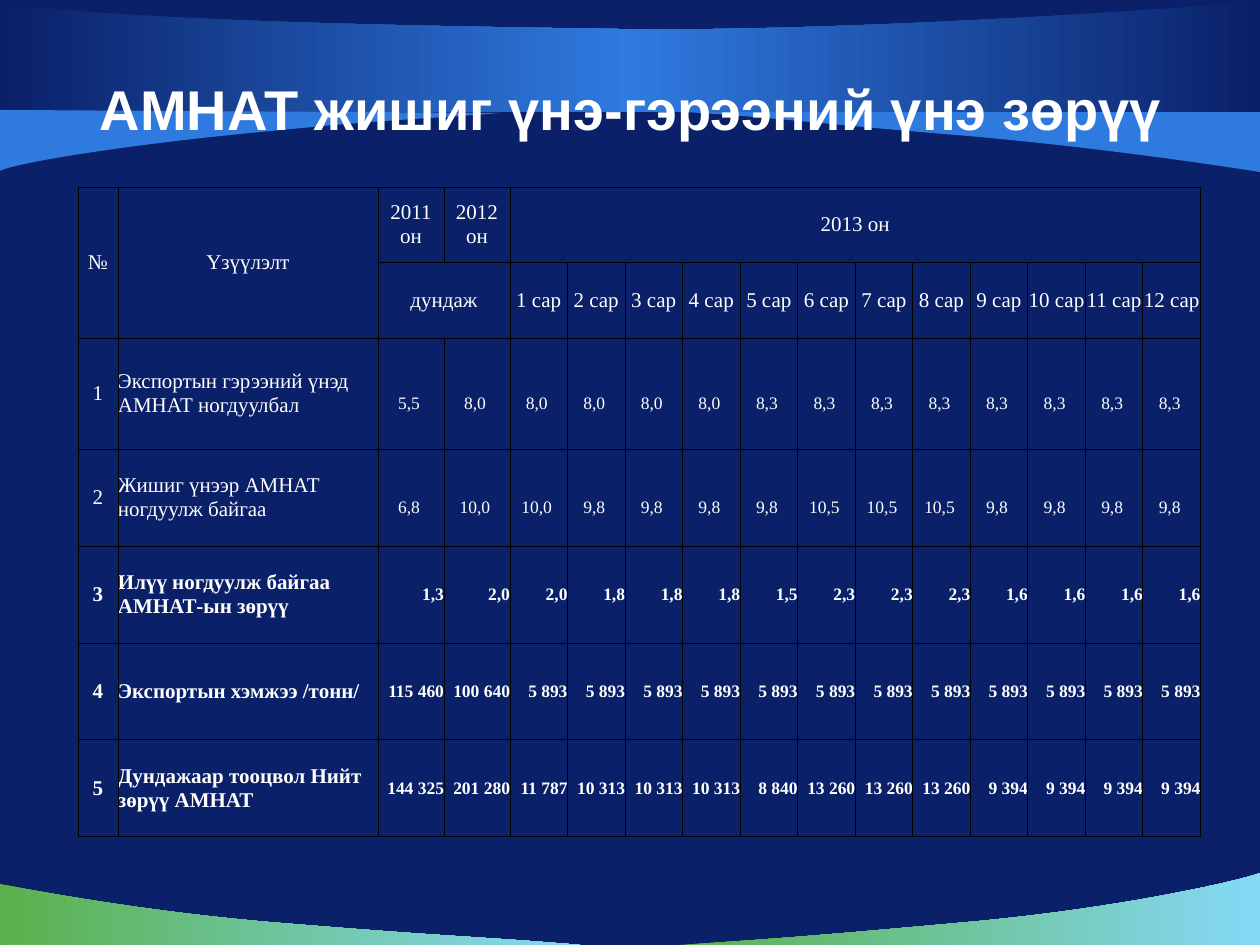
import copy
from dataclasses import dataclass

import lxml.etree
import pptx
import pptx.dml.color
import pptx.enum.text
import pptx.oxml.ns
import pptx.util

ALIGN = pptx.enum.text.PP_ALIGN
MIDDLE = pptx.enum.text.MSO_ANCHOR.MIDDLE
EMU_PER_PX = 914400 / 126


@dataclass(frozen=True)
class Theme:
    """Colours, fonts and type sizes of the slide."""
    navy: str = "0A2068"
    blue: str = "2F7ADF"
    green: str = "5AB14B"
    sky: str = "85D9F7"
    text: str = "FFFFFF"
    border: str = "000000"
    title_font: str = "Arial"
    table_font: str = "Times New Roman"
    title_size: int = 32
    label_size: int = 12
    value_size: int = 10
    border_width: float = 0.5


THEME = Theme()

WAVES = [
    ((0, 884), (THEME.green, THEME.sky),
     [(580, 61), (484, 53, 451, 53, 292, 40), (134, 28, 1, 0, 0, 0), (0, 61)]),
    ((679, 873), (THEME.green, THEME.sky),
     [(0, 72), (95, 66, 135, 63, 290, 49), (445, 35, 568, 6, 581, 0), (581, 72)]),
    ((685, 111), (THEME.blue,),
     [(0, 1), (96, 7, 124, 12, 283, 25), (441, 39, 574, 61, 575, 61), (575, 0)]),
    ((0, 0), (THEME.navy, THEME.blue, THEME.navy),
     [(0, 112), (1260, 112), (1260, 0), (1215, 8, 823, 33, 614, 29),
      (404, 26, 127, 21, 0, 3)]),
    ((0, 110), (THEME.blue,),
     [(501, 3), (417, 10, 401, 8, 262, 22), (122, 35, 11, 54, 0, 61), (0, 0)]),
]

TITLE = "АМНАТ жишиг үнэ-гэрээний үнэ зөрүү"
MONTH_COUNT = 12
HEADERS = [
    ["№", "Үзүүлэлт", "2011 он", "2012 он", "2013 он"] + [""] * (MONTH_COUNT - 1),
    ["", "", "дундаж", ""] + [f"{month} сар" for month in range(1, MONTH_COUNT + 1)],
]
SPANS = [(0, 0, 1, 0), (0, 1, 1, 1), (0, 4, 0, 15), (1, 2, 1, 3)]
INDICATORS = [
    ("Экспортын гэрээний үнэд АМНАТ ногдуулбал",
     ["5,5"] + ["8,0"] * 5 + ["8,3"] * 8),
    ("Жишиг үнээр АМНАТ ногдуулж байгаа",
     ["6,8"] + ["10,0"] * 2 + ["9,8"] * 4 + ["10,5"] * 3 + ["9,8"] * 4),
    ("Илүү ногдуулж байгаа АМНАТ-ын зөрүү",
     ["1,3"] + ["2,0"] * 2 + ["1,8"] * 3 + ["1,5"] + ["2,3"] * 3 + ["1,6"] * 4),
    ("Экспортын хэмжээ /тонн/",
     ["115 460", "100 640"] + ["5 893"] * 12),
    ("Дундажаар тооцвол Нийт зөрүү АМНАТ",
     ["144 325", "201 280", "11 787"] + ["10 313"] * 3 + ["8 840"]
     + ["13 260"] * 3 + ["9 394"] * 4),
]
PLAIN_INDICATORS = 2


def emu(px):
    """Turn px into EMU."""
    return pptx.util.Emu(round(px * EMU_PER_PX))


def rgb(value):
    """Return the colour for a hex value."""
    return pptx.dml.color.RGBColor.from_string(value)


def style_text(para, font, size, bold, align):
    """Align a paragraph and format its runs."""
    para.alignment = align
    for span in para.runs:
        span.font.name = font
        span.font.size = pptx.util.Pt(size)
        span.font.bold = bold
        span.font.color.rgb = rgb(THEME.text)


def bend_segments(shape, segments):
    """Turn the straight segments that have control points into cubic curves."""
    lines = shape._element.spPr.findall(".//" + pptx.oxml.ns.qn("a:lnTo"))
    for line, segment in zip(lines, segments[1:]):
        if len(segment) == 2:
            continue
        curve = lxml.etree.Element(pptx.oxml.ns.qn("a:cubicBezTo"))
        for x, y in zip(segment[::2], segment[1::2]):
            point = lxml.etree.SubElement(curve, pptx.oxml.ns.qn("a:pt"))
            point.set("x", str(emu(x)))
            point.set("y", str(emu(y)))
        line.getparent().replace(line, curve)


def fill_wave(shape, colors):
    """Fill a shape with one colour or an even left-to-right gradient."""
    if len(colors) == 1:
        shape.fill.solid()
        shape.fill.fore_color.rgb = rgb(colors[0])
        return
    shape.fill.gradient()
    shape.fill.gradient_angle = 0
    stop_list = shape._element.spPr.find(".//" + pptx.oxml.ns.qn("a:gsLst"))
    for _ in colors[2:]:
        stop_list.append(copy.deepcopy(stop_list[0]))
    for index, (stop, color) in enumerate(zip(shape.fill.gradient_stops, colors)):
        stop.position = index / (len(colors) - 1)
        stop.color.rgb = rgb(color)


def add_wave(page, corner, colors, segments):
    """Draw one background wave relative to its top left corner."""
    left, top = corner
    points = [(emu(left + segment[-2]), emu(top + segment[-1])) for segment in segments]
    builder = page.shapes.build_freeform(*points[0])
    builder.add_line_segments(points[1:], close=True)
    shape = builder.convert_to_shape()
    bend_segments(shape, segments)
    shape.shadow.inherit = False
    shape.line.fill.background()
    fill_wave(shape, colors)


def add_title(page, box):
    """Place the centred title in its box."""
    frame = page.shapes.add_textbox(*map(emu, box)).text_frame
    frame.word_wrap = True
    frame.vertical_anchor = MIDDLE
    frame.text = TITLE
    style_text(frame.paragraphs[0], THEME.title_font, THEME.title_size, True, ALIGN.CENTER)


def add_borders(cell):
    """Draw thin lines on all four sides of a cell."""
    properties = cell._tc.get_or_add_tcPr()
    for side in ("a:lnL", "a:lnR", "a:lnT", "a:lnB"):
        line = lxml.etree.SubElement(properties, pptx.oxml.ns.qn(side))
        line.set("w", str(pptx.util.Pt(THEME.border_width)))
        fill = lxml.etree.SubElement(line, pptx.oxml.ns.qn("a:solidFill"))
        lxml.etree.SubElement(fill, pptx.oxml.ns.qn("a:srgbClr")).set("val", THEME.border)


def fill_cell(cell, text, size, bold, align):
    """Set the text and look of one table cell."""
    cell.margin_left = cell.margin_right = cell.margin_top = cell.margin_bottom = 0
    cell.vertical_anchor = MIDDLE
    add_borders(cell)
    cell.fill.background()
    cell.text_frame.text = text
    style_text(cell.text_frame.paragraphs[0], THEME.table_font, size, bold, align)


def add_price_table(page, box):
    """Place the price difference table in its box."""
    width, height = box[2:]
    leading = [40, 260, 66, 66]
    widths = leading + [(width - sum(leading)) / MONTH_COUNT] * MONTH_COUNT
    heights = [75, 76, 111] + [(height - 262) / 4] * 4
    table = page.shapes.add_table(len(heights), len(widths), *map(emu, box)).table
    table.first_row = table.horz_banding = False
    for column, size in zip(table.columns, widths):
        column.width = emu(size)
    for row, size in zip(table.rows, heights):
        row.height = emu(size)
    for row, labels in enumerate(HEADERS):
        for column, label in enumerate(labels):
            fill_cell(table.cell(row, column), label, THEME.label_size, False, ALIGN.CENTER)
    for row, (name, values) in enumerate(INDICATORS, len(HEADERS)):
        number = row - len(HEADERS) + 1
        plain = number <= PLAIN_INDICATORS
        fill_cell(table.cell(row, 0), str(number), THEME.label_size, not plain, ALIGN.CENTER)
        fill_cell(table.cell(row, 1), name, THEME.label_size, not plain, ALIGN.LEFT)
        for column, value in enumerate(values, 2):
            cell = table.cell(row, column)
            align = ALIGN.CENTER if plain else ALIGN.RIGHT
            fill_cell(cell, value, THEME.value_size, not plain, align)
            if plain:
                cell.margin_top, cell.margin_right = emu(20), emu(4)
    for first_row, first_column, last_row, last_column in SPANS:
        table.cell(first_row, first_column).merge(table.cell(last_row, last_column))


def main():
    """Build and save the slide."""
    deck = pptx.Presentation()
    deck.slide_width, deck.slide_height = emu(1260), emu(945)
    page = deck.slides.add_slide(deck.slide_layouts[6])
    page.background.fill.solid()
    page.background.fill.fore_color.rgb = rgb(THEME.navy)
    for corner, colors, segments in WAVES:
        add_wave(page, corner, colors, segments)
    add_title(page, (59, 69, 1144, 78))
    add_price_table(page, (78, 187, 1123, 650))
    deck.save("out.pptx")


if __name__ == "__main__":
    main()
